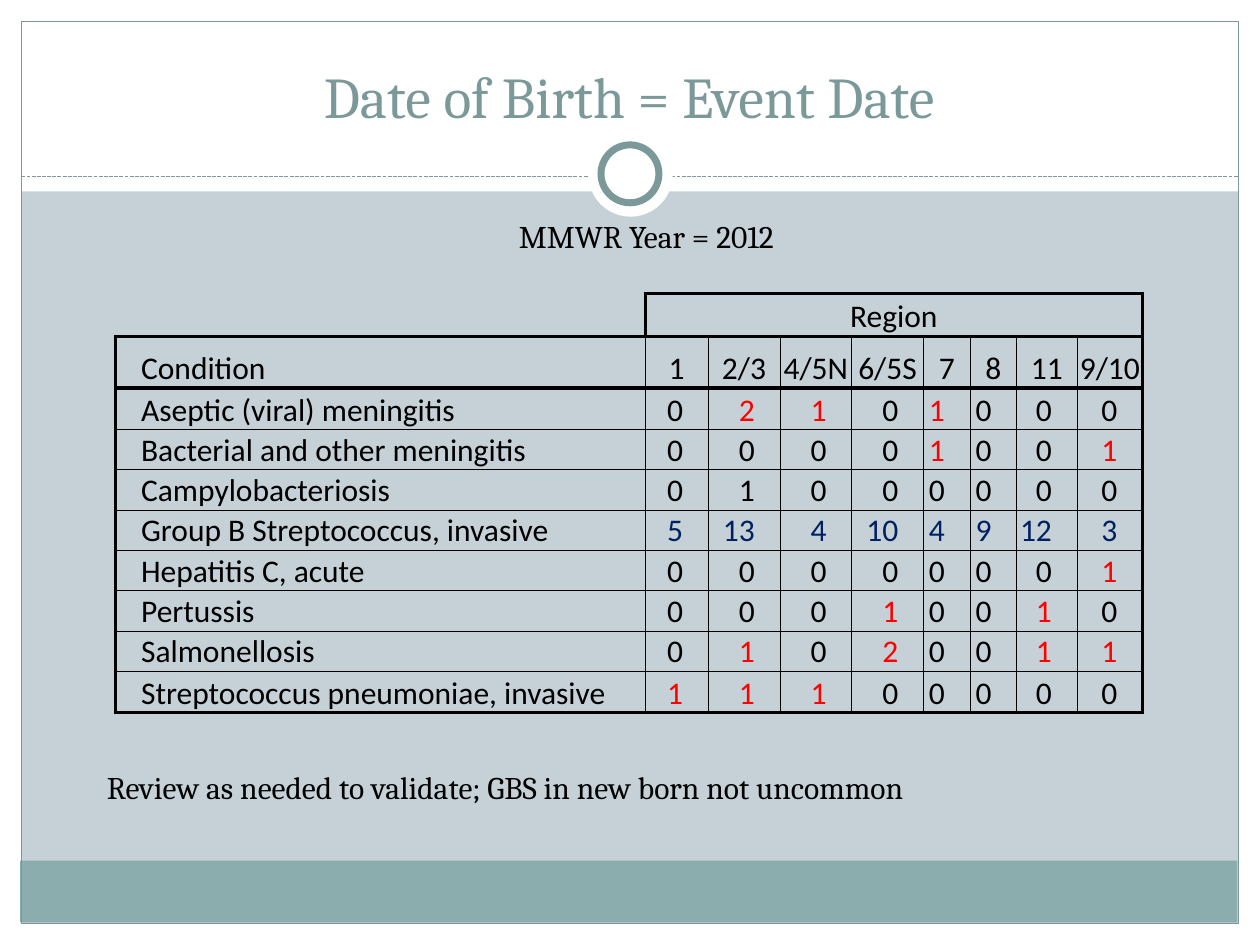
"""Build the slide that counts events dated on the day of birth, by region."""
from lxml import etree
from pptx import Presentation
from pptx import util as u
from pptx.dml import color
from pptx.enum import dml, shapes, text
from pptx.oxml import ns

WHITE, BLACK, RED, NAVY = "FFFFFF", "000000", "FF0000", "002060"
TEAL, TEAL_LIGHT, BLUE_GREY = "7C999A", "8CADAE", "C5D1D7"
THIN, THICK = 0.5, 2
LEFT, CENTER, RIGHT = text.PP_ALIGN.LEFT, text.PP_ALIGN.CENTER, text.PP_ALIGN.RIGHT

REGIONS = ["1", "2/3", "4/5N", "6/5S", "7", "8", "11", "9/10"]
CONDITIONS = {
    "Aseptic (viral) meningitis": [0, 2, 1, 0, 1, 0, 0, 0],
    "Bacterial and other meningitis": [0, 0, 0, 0, 1, 0, 0, 1],
    "Campylobacteriosis": [0, 1, 0, 0, 0, 0, 0, 0],
    "Group B Streptococcus, invasive": [5, 13, 4, 10, 4, 9, 12, 3],
    "Hepatitis C, acute": [0, 0, 0, 0, 0, 0, 0, 1],
    "Pertussis": [0, 0, 0, 1, 0, 0, 1, 0],
    "Salmonellosis": [0, 1, 0, 2, 0, 0, 1, 1],
    "Streptococcus pneumoniae, invasive": [1, 1, 1, 0, 0, 0, 0, 0],
}
COUNT_COLORS = {"Campylobacteriosis": BLACK, "Group B Streptococcus, invasive": NAVY}
COLUMN_WIDTHS = [4.2, 0.5, 0.57, 0.57, 0.57, 0.37, 0.37, 0.48, 0.52]
ROW_HEIGHTS = [0.34, 0.41, 0.33, 0.32, 0.32, 0.32, 0.32, 0.32, 0.32, 0.33]


def rgb(value):
    """Return the colour for a hex string."""
    return color.RGBColor.from_string(value)


def write(frame, words, size=18, font="Cambria", ink=BLACK, align=LEFT):
    """Put one formatted paragraph into a text frame."""
    paragraph = frame.paragraphs[0]
    paragraph.alignment = align
    run = paragraph.add_run()
    run.text = words
    run.font.size, run.font.name = u.Pt(size), font
    run.font.color.rgb = rgb(ink)


def set_borders(cell, **widths):
    """Set the borders of a cell by side, with None for no line."""
    properties = cell._tc.get_or_add_tcPr()
    for side in "LRTB":
        width = widths.get(side)
        line = etree.SubElement(properties, ns.qn("a:ln" + side), w=str(u.Pt(width or 0)))
        if width is None:
            etree.SubElement(line, ns.qn("a:noFill"))
        else:
            fill = etree.SubElement(line, ns.qn("a:solidFill"))
            etree.SubElement(fill, ns.qn("a:srgbClr"), val=BLACK)


def count_color(condition, count):
    """Return the colour for a count: nonzero counts stand out."""
    return COUNT_COLORS.get(condition, RED) if count else BLACK


class SlideBuilder:
    """Hold the slide and draw its elements."""

    def __init__(self, slide, background):
        """Keep the slide and paint its background."""
        self.slide = slide
        slide.background.fill.solid()
        slide.background.fill.fore_color.rgb = rgb(background)

    def shape(self, kind, *box, fill=None, line=None, width=0.75):
        """Add a preset shape."""
        shape = self.slide.shapes.add_shape(kind, *map(u.Inches, box))
        shape.shadow.inherit = False
        if fill:
            shape.fill.solid()
            shape.fill.fore_color.rgb = rgb(fill)
        else:
            shape.fill.background()
        if line:
            shape.line.color.rgb = rgb(line)
            shape.line.width = u.Pt(width)
        else:
            shape.line.fill.background()

    def dashed_line(self, *ends, ink):
        """Add a thin dashed line."""
        line = self.slide.shapes.add_connector(
            shapes.MSO_CONNECTOR.STRAIGHT, *map(u.Inches, ends))
        line.line.color.rgb = rgb(ink)
        line.line.width = u.Pt(0.75)
        line.line.dash_style = dml.MSO_LINE.SQUARE_DOT
        etree.SubElement(line._element.spPr, ns.qn("a:effectLst"))

    def text(self, words, *box, anchor=text.MSO_ANCHOR.TOP, **style):
        """Add a wrapping text box."""
        frame = self.slide.shapes.add_textbox(*map(u.Inches, box)).text_frame
        frame.word_wrap = True
        frame.vertical_anchor = anchor
        write(frame, words, **style)

    def table(self, *box):
        """Add an empty table with plain style and set its grid."""
        table = self.slide.shapes.add_table(
            len(ROW_HEIGHTS), len(COLUMN_WIDTHS), *map(u.Inches, box)).table
        table.first_row = table.horz_banding = False
        for column, width in zip(table.columns, COLUMN_WIDTHS):
            column.width = u.Inches(width)
        for row, height in zip(table.rows, ROW_HEIGHTS):
            row.height = u.Inches(height)
        return table

    def cell(self, cell, words="", left=0.01, right=0.01, borders=None, **style):
        """Format and fill one table cell."""
        cell.margin_left, cell.margin_right = u.Inches(left), u.Inches(right)
        cell.margin_top, cell.margin_bottom = u.Inches(0.01), 0
        cell.vertical_anchor = text.MSO_ANCHOR.BOTTOM
        set_borders(cell, **borders)
        cell.fill.background()
        if words:
            write(cell.text_frame, words, font="Calibri", **style)


def add_frame(builder):
    """Draw the margins, the header, the footer band and the ring."""
    rectangle, oval = shapes.MSO_SHAPE.RECTANGLE, shapes.MSO_SHAPE.OVAL
    for box in [(0, 7.33, 10, 0.17), (0, 0, 10, 1.52),
                (0, 0, 0.17, 7.5), (9.83, 0, 0.17, 7.5)]:
        builder.shape(rectangle, *box, fill=WHITE)
    builder.shape(rectangle, 0.16, 6.83, 9.66, 0.49, fill=TEAL_LIGHT)
    builder.shape(rectangle, 0.17, 0.17, 9.66, 7.16, line=TEAL)
    builder.dashed_line(0.17, 1.4, 9.83, 1.4, ink=TEAL)
    builder.shape(oval, 4.67, 1.05, 0.67, 0.67, fill=WHITE)
    builder.shape(oval, 4.77, 1.15, 0.46, 0.46, fill=WHITE, line=TEAL, width=4)


def add_counts(builder):
    """Draw the table of counts by condition and region."""
    table = builder.table(0.92, 2.33, 8.17, 3.35)
    last_row, last_column = len(CONDITIONS) + 1, len(REGIONS)
    builder.cell(table.cell(0, 0), borders={"R": THICK, "B": THICK})
    table.cell(0, 1).merge(table.cell(0, last_column))
    for column in range(1, last_column + 1):
        builder.cell(table.cell(0, column), "Region" if column == 1 else "",
                     borders=dict.fromkeys("LRTB", THICK), align=CENTER)

    rows = [("Condition", REGIONS), *CONDITIONS.items()]
    for row, (condition, values) in enumerate(rows, 1):
        for column, value in enumerate([condition, *values]):
            borders = {
                "L": THICK if column == 0 else THIN,
                "R": THICK if column == last_column else THIN,
                "T": THICK if row <= 2 else THIN,
                "B": THICK if row in (1, last_row) else THIN,
            }
            if column == 0:
                style = {"left": 0.2}
            elif row == 1:
                style = {"align": CENTER}
            else:
                style = {"right": 0.2, "align": RIGHT, "ink": count_color(condition, value)}
            builder.cell(table.cell(row, column), str(value), borders=borders, **style)


def main():
    """Build and save the presentation."""
    presentation = Presentation()
    presentation.slide_width, presentation.slide_height = u.Inches(10), u.Inches(7.5)
    slide = presentation.slides.add_slide(presentation.slide_layouts[6])
    builder = SlideBuilder(slide, BLUE_GREY)
    add_frame(builder)
    builder.text("Date of Birth = Event Date", 0.33, 0.25, 9.33, 0.83,
                 anchor=text.MSO_ANCHOR.BOTTOM, size=33, ink=TEAL, align=CENTER)
    add_counts(builder)
    builder.text("MMWR Year = 2012", 2.92, 1.67, 4.42, 0.4, align=CENTER)
    builder.text("Review as needed to validate; GBS in new born not uncommon",
                 0.75, 6.05, 8.75, 0.4)
    presentation.save("out.pptx")


if __name__ == "__main__":
    main()
